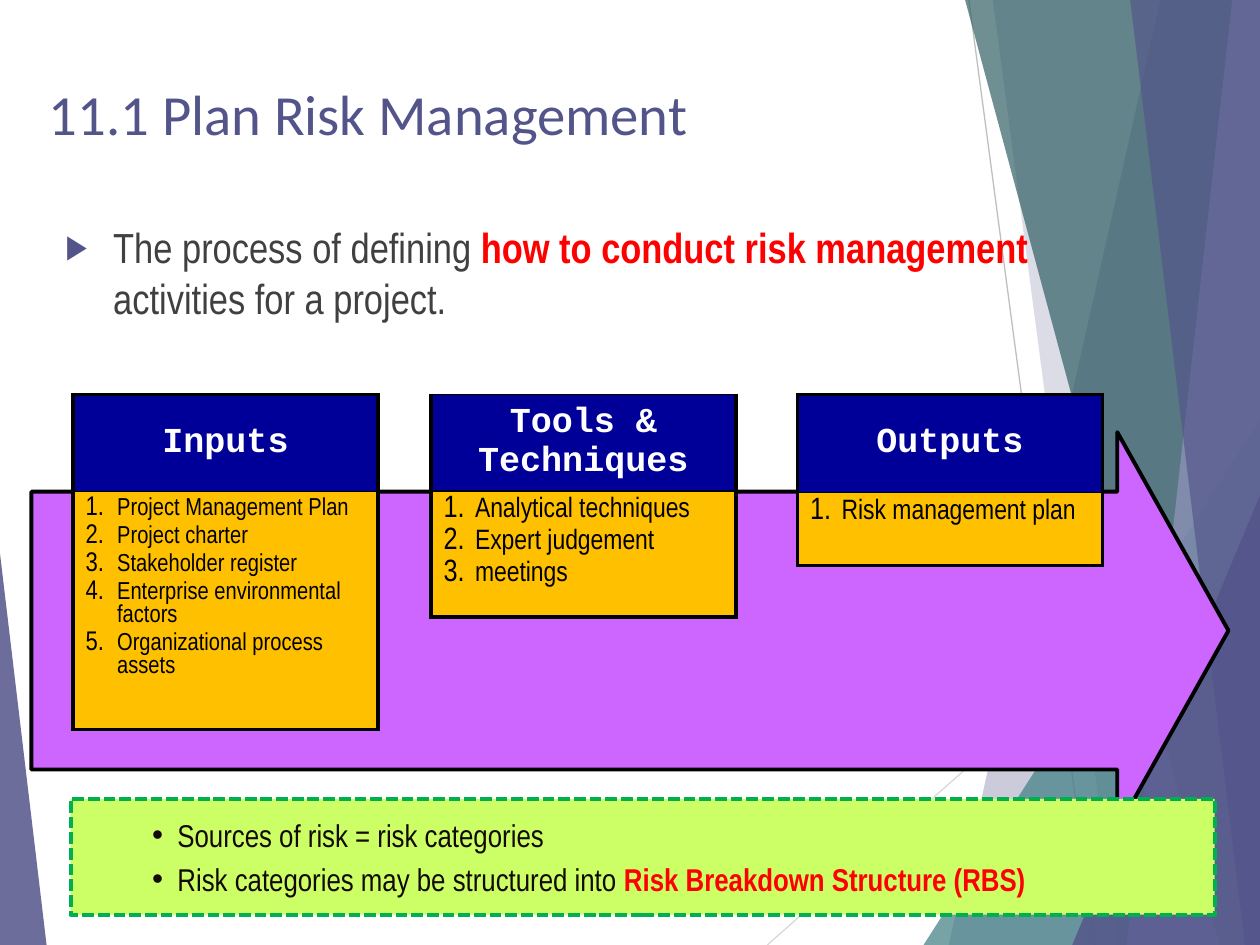
"""Build the Plan Risk Management slide with its inputs, tools and outputs."""
from lxml import etree
from pptx import Presentation
from pptx.dml.color import RGBColor
from pptx.enum.dml import MSO_LINE
from pptx.enum.shapes import MSO_CONNECTOR, MSO_SHAPE
from pptx.enum.text import MSO_ANCHOR, PP_ALIGN
from pptx.oxml.ns import qn
from pptx.util import Inches, Pt

DASH = MSO_LINE.SQUARE_DOT
LINE = MSO_CONNECTOR.STRAIGHT
RECT, ARROW, TRI = MSO_SHAPE.RECTANGLE, MSO_SHAPE.RIGHT_ARROW, MSO_SHAPE.ISOSCELES_TRIANGLE
TOP, MID = MSO_ANCHOR.TOP, MSO_ANCHOR.MIDDLE
LEFT, CENTER = PP_ALIGN.LEFT, PP_ALIGN.CENTER

WIDE, HIGH = 10, 7.5
HEX = {
    "indigo": "53548A", "lilac": "9394BE", "teal": "438086", "pine": "326065",
    "gray": "BFBFBF", "pale": "D9D9D9", "text": "404040", "ink": "140A05",
    "black": "000000", "white": "FFFFFF", "red": "FF0000", "navy": "000099",
    "gold": "FFC000", "violet": "CC66FF", "lime": "CCFF66", "green": "00B050",
}
NARROW = "Arial Narrow"

RAYS = [((7.69, 0), (8.69, HIGH), "gray"), ((WIDE, 4.03), (6.09, HIGH), "pale")]
DECOR = [
    ("band", 9.21, 7.53, "indigo", 30),
    ("band", 7.88, 8.87, "indigo", 20),
    ("peak", (7.33, 3.33, 2.67), 1, "teal", 72),
    ("band", 7.66, 9.68, "pine", 70),
    ("band", 9.78, 8.94, "lilac", 70),
    ("band", 8.97, 9.88, "indigo", 65),
    ("peak", (8.51, 3.93, 1.49), 1, "indigo", 80),
    ("peak", (0, 4.39, 0.37), 0, "indigo", 85),
]
TITLE = "11.1 Plan Risk Management"
BODY = [["The process of defining ", ("how to conduct risk management ",), "activities for a project."]]
NOTES = [
    ["Sources of risk = risk categories"],
    ["Risk categories may be structured into ", ("Risk Breakdown Structure (RBS)",)],
]
CARDS = [
    {"head": "Inputs", "left": 0.58, "rows": (0.77, 1.54), "size": 14, "edge": 2.25,
     "list": ["Project Management Plan", "Project charter", "Stakeholder register",
              "Enterprise environmental factors", "Organizational process assets"]},
    {"head": "Tools & Techniques", "left": 3.42, "rows": (0.73, 1), "size": 16, "edge": 1,
     "list": ["Analytical techniques", "Expert judgement", "meetings"]},
    {"head": "Outputs", "left": 6.33, "rows": (0.78, 0.58), "size": 16, "edge": 2.25,
     "list": ["Risk management plan"]},
]
CARD_TOP, CARD_WIDE = 3.13, 2.42


def rgb(name):
    return RGBColor.from_string(HEX[name])


def add(node, tag, **attrs):
    return etree.SubElement(node, qn(tag), attrs)


def paint(shape, color, alpha=100, edge=None, width=2.25):
    shape.shadow.inherit = False
    shape.fill.solid()
    shape.fill.fore_color.rgb = rgb(color)
    if alpha < 100:
        tint = shape.fill._xPr.find(qn("a:solidFill"))[0]
        add(tint, "a:alpha", val=str(alpha * 1000))
    if edge:
        shape.line.color.rgb = rgb(edge)
        shape.line.width = Pt(width)
    else:
        shape.line.fill.background()


def mark(para, bullet, hang, color=None, scale=None):
    props = para._p.get_or_add_pPr()
    props.set("marL", str(Inches(hang[0])))
    props.set("indent", str(Inches(-hang[1])))
    if color:
        add(add(props, "a:buClr"), "a:srgbClr", val=HEX[color])
    if scale:
        add(props, "a:buSzPct", val=str(scale * 1000))
    if bullet == "1.":
        add(props, "a:buFont", typeface=NARROW)
        add(props, "a:buAutoNum", type="arabicPeriod")
    else:
        add(props, "a:buFont", typeface="Arial")
        add(props, "a:buChar", char=bullet)


def write(frame, paras, size, color, font=NARROW, bold=False, align=LEFT,
          before=0, anchor=TOP, bullet=None):
    frame.word_wrap = True
    frame.vertical_anchor = anchor
    for i, parts in enumerate(paras):
        para = frame.add_paragraph() if i else frame.paragraphs[0]
        para.alignment, para.line_spacing = align, 1.0
        para.space_before = Pt(before)
        if bullet:
            mark(para, **bullet)
        for part in parts:
            hot = isinstance(part, tuple)
            run = para.add_run()
            run.text = part[0] if hot else part
            run.font.name, run.font.size = font, Pt(size)
            run.font.bold = hot or bold
            run.font.color.rgb = rgb("red" if hot else color)


def frame_cell(cell, color, above, below):
    cell.fill.solid()
    cell.fill.fore_color.rgb = rgb(color)
    props = cell._tc.get_or_add_tcPr()
    sides = {"L": 2.25, "R": 2.25, "T": above, "B": below}
    for i, (side, width) in enumerate(sides.items()):
        line = etree.Element(qn("a:ln" + side), w=str(Pt(width)))
        add(add(line, "a:solidFill"), "a:srgbClr", val=HEX["black"])
        props.insert(i, line)


def draw_decor(shapes):
    for start, end, color in RAYS:
        ray = shapes.add_connector(LINE, *map(Inches, start + end))
        ray.line.color.rgb = rgb(color)
        ray.line.width = Pt(0.75)
        add(ray._element.spPr, "a:effectLst")
    for kind, place, turn, color, alpha in DECOR:
        if kind == "band":
            pen = shapes.build_freeform(Inches(place), 0)
            ends = [(WIDE, 0), (WIDE, HIGH), (turn, HIGH)]
            pen.add_line_segments([(Inches(x), Inches(y)) for x, y in ends], close=True)
            shape = pen.convert_to_shape()
        else:
            left, top, width = place
            shape = shapes.add_shape(TRI, *map(Inches, (left, top, width, HIGH - top)))
            shape.adjustments[0] = turn
        paint(shape, color, alpha)


def draw_card(shapes, card):
    box = (card["left"], CARD_TOP, CARD_WIDE, sum(card["rows"]))
    table = shapes.add_table(2, 1, *map(Inches, box)).table
    table.first_row = table.horz_banding = False
    for row, height in zip(table.rows, card["rows"]):
        row.height = Inches(height)
    head, body = table.cell(0, 0), table.cell(1, 0)
    frame_cell(head, "navy", card["edge"], 1)
    frame_cell(body, "gold", 1, 2.25)
    write(head.text_frame, [[card["head"]]], 20, "white", font="Courier New",
          bold=True, align=CENTER)
    head.vertical_anchor = MID
    size = card["size"]
    write(body.text_frame, [[item] for item in card["list"]], size, "black",
          before=size / 5,
          bullet={"bullet": "1.", "hang": (0.25, 0.25), "scale": 110})


def main():
    deck = Presentation()
    deck.slide_width, deck.slide_height = Inches(WIDE), Inches(HIGH)
    shapes = deck.slides.add_slide(deck.slide_layouts[6]).shapes
    draw_decor(shapes)

    arrow = shapes.add_shape(ARROW, *map(Inches, (0.25, 3.43, 9.5, 3.15)))
    arrow.adjustments[0], arrow.adjustments[1] = 0.7, 0.28
    paint(arrow, "violet", edge="black")

    title = shapes.add_textbox(*map(Inches, (0.29, 0.58, 8.33, 0.42)))
    write(title.text_frame, [[TITLE]], 32.4, "indigo", font="Calibri")
    body = shapes.add_textbox(*map(Inches, (0.42, 1.71, 8.58, 1.5)))
    write(body.text_frame, BODY, 24, "text", before=10,
          bullet={"bullet": "▶", "hang": (0.38, 0.38), "color": "indigo", "scale": 80})

    for card in CARDS:
        draw_card(shapes, card)

    note = shapes.add_shape(RECT, *map(Inches, (0.56, 6.34, 9.08, 0.92)))
    paint(note, "lime", edge="green")
    note.line.dash_style = DASH
    write(note.text_frame, NOTES, 18, "ink", before=3.6, anchor=MID,
          bullet={"bullet": "•", "hang": (0.75, 0.2)})
    deck.save("out.pptx")


if __name__ == "__main__":
    main()
